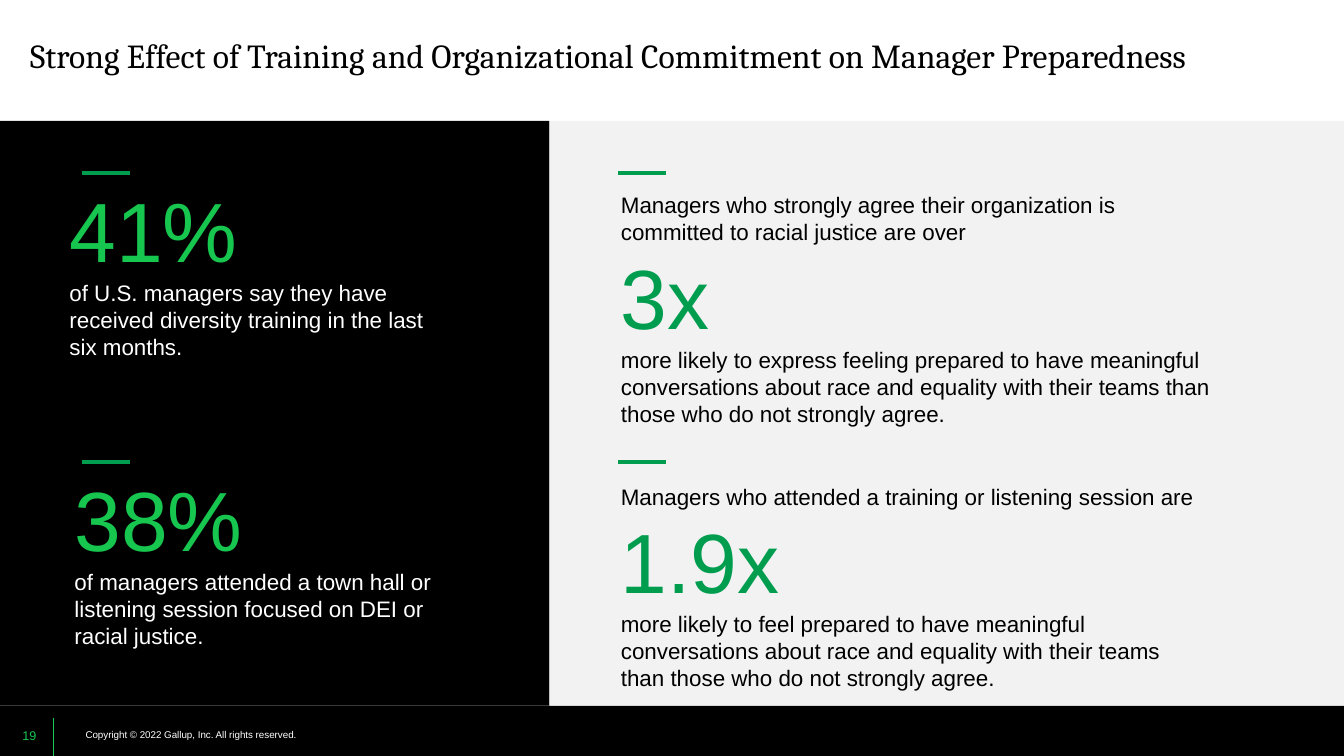
from lxml import etree
from pptx import Presentation
from pptx.dml.color import RGBColor
from pptx.enum import shapes, text
from pptx.oxml import ns
from pptx.util import Inches, Pt

BLACK = RGBColor(0x00, 0x00, 0x00)
WHITE = RGBColor(0xFF, 0xFF, 0xFF)
PALE_GRAY = RGBColor(0xF2, 0xF2, 0xF2)
BRIGHT_GREEN = RGBColor(0x16, 0xC6, 0x4F)
DARK_GREEN = RGBColor(0x00, 0x9D, 0x4F)


def add_panel(s, left, top, width, height, color):
    """Add a plain filled rectangle."""
    sp = s.shapes.add_shape(shapes.MSO_SHAPE.RECTANGLE, Inches(left), Inches(top),
                            Inches(width), Inches(height))
    sp.shadow.inherit = False
    sp.fill.solid()
    sp.fill.fore_color.rgb = color
    sp.line.fill.background()


def add_line(s, x1, y1, x2, y2, color, width):
    """Add a straight line without shadow."""
    ln = s.shapes.add_connector(shapes.MSO_CONNECTOR.STRAIGHT, Inches(x1), Inches(y1),
                                Inches(x2), Inches(y2))
    ln.line.color.rgb = color
    ln.line.width = Pt(width)
    etree.SubElement(ln._element.spPr, ns.qn("a:effectLst"))


def set_insets(tf, left, top, right, bottom):
    """Set the inner margins of a text frame."""
    tf.margin_left, tf.margin_top = Inches(left), Inches(top)
    tf.margin_right, tf.margin_bottom = Inches(right), Inches(bottom)


def add_run(p, words, size, color, font="Arial"):
    """Add one formatted run to a paragraph."""
    r = p.add_run()
    r.text = words
    r.font.size = Pt(size)
    r.font.name = font
    r.font.color.rgb = color


def add_text(s, left, top, width, height, paragraphs):
    """Add a wrapping text box of (words, size, color) paragraphs."""
    tf = s.shapes.add_textbox(Inches(left), Inches(top), Inches(width), Inches(height)).text_frame
    tf.word_wrap = True
    for i, (words, size, color) in enumerate(paragraphs):
        p = tf.add_paragraph() if i else tf.paragraphs[0]
        add_run(p, words, size, color)
    return tf


def add_title(s, words):
    """Place and format the title placeholder."""
    sp = s.shapes.title
    sp.left, sp.top, sp.width, sp.height = Inches(0), Inches(0), Inches(13.33), Inches(1.06)
    tf = sp.text_frame
    tf.word_wrap = True
    tf.auto_size = text.MSO_AUTO_SIZE.NONE
    tf.vertical_anchor = text.MSO_ANCHOR.TOP
    set_insets(tf, 0.3, 0.35, 0.3, 0.3)
    p = tf.paragraphs[0]
    p.alignment = text.PP_ALIGN.LEFT
    add_run(p, words, 24, BLACK, "Cambria")


def add_footer(s):
    """Add the footer bar with page number and copyright line."""
    add_panel(s, 0, 7, 13.33, 0.5, BLACK)
    tf = add_text(s, 0.75, 7.18, 3.75, 0.22,
                  [("Copyright © 2022 Gallup, Inc. All rights reserved.", 7, WHITE)])
    tf.word_wrap = False
    tf.vertical_anchor = text.MSO_ANCHOR.MIDDLE
    add_line(s, 0.53, 7.5, 0.53, 7.12, BRIGHT_GREEN, 0.75)
    tf = add_text(s, 0, 7.1, 0.53, 0.4, [("19", 9, BRIGHT_GREEN)])
    tf.vertical_anchor = text.MSO_ANCHOR.MIDDLE
    set_insets(tf, 0.15, 0.05, 0.1, 0.05)
    tf.paragraphs[0].alignment = text.PP_ALIGN.CENTER


def main():
    """Build the slide and save it."""
    prs = Presentation()
    prs.slide_width, prs.slide_height = Inches(13.33), Inches(7.5)
    s = prs.slides.add_slide(prs.slide_layouts[5])
    add_title(s, "Strong Effect of Training and Organizational Commitment on Manager Preparedness")
    add_footer(s)
    add_panel(s, 0, 1.2, 5.45, 5.8, BLACK)
    add_panel(s, 5.45, 1.2, 7.88, 5.8, PALE_GRAY)

    add_text(s, 0.59, 1.72, 3.75, 1.92, [
        ("41%", 60, BRIGHT_GREEN),
        ("of U.S. managers say they have received diversity training in the last six months.",
         16, WHITE)])
    add_text(s, 0.64, 4.59, 3.75, 1.92, [
        ("38%", 60, BRIGHT_GREEN),
        ("of managers attended a town hall or listening session focused on DEI or racial justice.",
         16, WHITE)])
    add_text(s, 6.06, 1.85, 6.18, 2.46, [
        ("Managers who strongly agree their organization is committed to racial justice are over",
         16, BLACK),
        ("3x", 60, DARK_GREEN),
        ("more likely to express feeling prepared to have meaningful conversations about race "
         "and equality with their teams than those who do not strongly agree.", 16, BLACK)])
    add_text(s, 6.06, 4.74, 5.93, 2.19, [
        ("Managers who attended a training or listening session are", 16, BLACK),
        ("1.9x", 60, DARK_GREEN),
        ("more likely to feel prepared to have meaningful conversations about race "
         "and equality with their teams than those who do not strongly agree.", 16, BLACK)])

    for x in (0.81, 6.13):
        for y in (1.72, 4.58):
            add_line(s, x, y, x + 0.48, y, DARK_GREEN, 3)
    prs.save("out.pptx")


if __name__ == "__main__":
    main()
